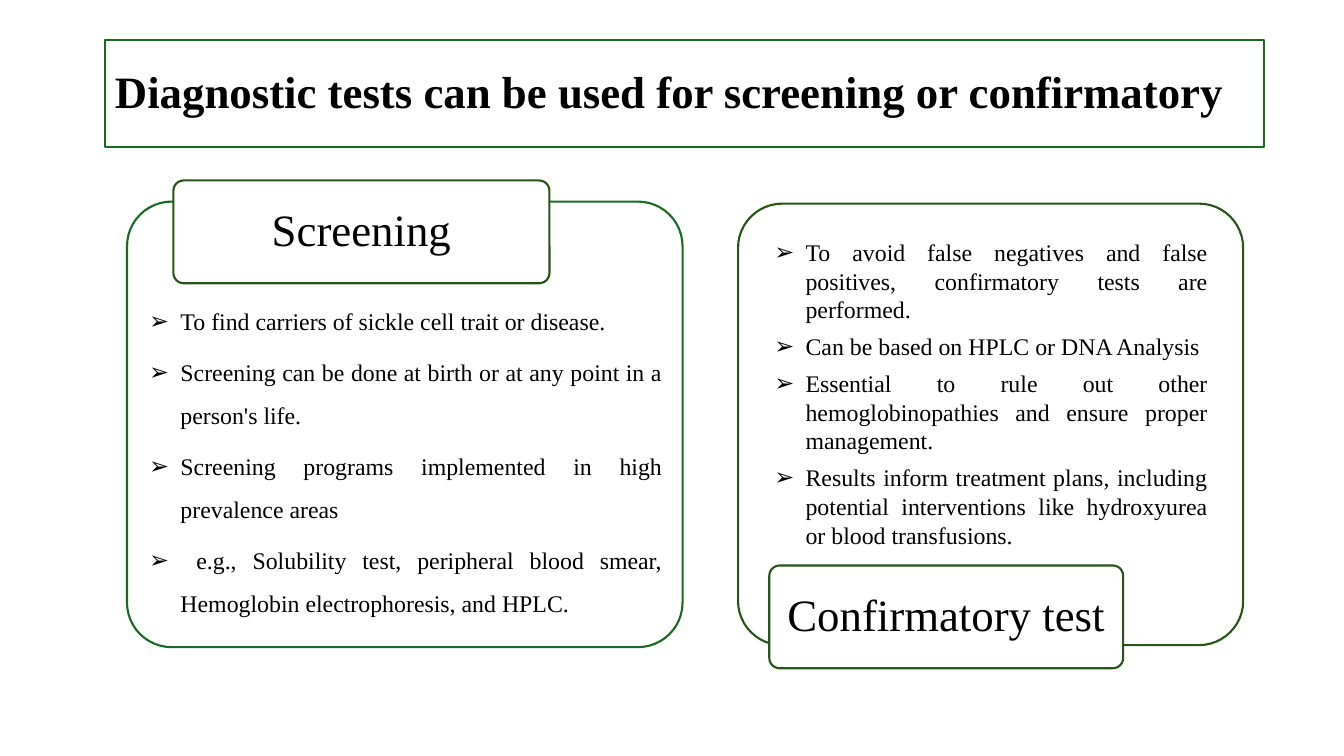
from lxml import etree
from pptx import Presentation
from pptx.dml.color import RGBColor
from pptx.enum.shapes import MSO_SHAPE
from pptx.enum.text import MSO_ANCHOR, MSO_AUTO_SIZE, PP_ALIGN
from pptx.oxml.ns import qn
from pptx.util import Inches, Pt

ROUND = MSO_SHAPE.ROUNDED_RECTANGLE
TOP, MIDDLE = MSO_ANCHOR.TOP, MSO_ANCHOR.MIDDLE
FIXED, GROW = MSO_AUTO_SIZE.NONE, MSO_AUTO_SIZE.SHAPE_TO_FIT_TEXT
LEFT, CENTER, JUSTIFY = PP_ALIGN.LEFT, PP_ALIGN.CENTER, PP_ALIGN.JUSTIFY
COLORS = {"ink": "000000", "paper": "FFFFFF", "green": "196B24", "olive": "275417"}
FONT = "Times New Roman"
INDENT = 0.31

SCREEN = [
    "To find carriers of sickle cell trait or disease.",
    "Screening can be done at birth or at any point in a person's life.",
    "Screening programs implemented in high prevalence areas",
    " e.g., Solubility test, peripheral blood smear, Hemoglobin electrophoresis, and HPLC.",
]
CONFIRM = [
    "To avoid false negatives and false positives, confirmatory tests are performed.",
    "Can be based on HPLC or DNA Analysis",
    "Essential to rule out other hemoglobinopathies and ensure proper management.",
    "Results inform treatment plans, including potential interventions like "
    "hydroxyurea or blood transfusions.",
]


def color(name):
    return RGBColor.from_string(COLORS[name])


def write(shape, lines, size=32, bold=False, align=LEFT, space=0.9, after=0,
          bullet=None, anchor=MIDDLE, fit=FIXED, inset=(0.1, 0.05)):
    frame = shape.text_frame
    frame.word_wrap = True
    frame.auto_size = fit
    frame.vertical_anchor = anchor
    frame.margin_left = frame.margin_right = Inches(inset[0])
    frame.margin_top = frame.margin_bottom = Inches(inset[1])
    for i, line in enumerate(lines):
        para = frame.add_paragraph() if i else frame.paragraphs[0]
        if bullet:
            props = para._p.get_or_add_pPr()
            props.set("marL", str(Inches(INDENT)))
            props.set("indent", str(-Inches(INDENT)))
            etree.SubElement(props, qn("a:buChar")).set("char", bullet)
        para.alignment = align
        para.line_spacing = space
        para.space_before = Pt(0)
        para.space_after = Pt(after)
        run = para.add_run()
        run.text = line
        run.font.name = FONT
        run.font.size = Pt(size)
        run.font.bold = bold
        run.font.color.rgb = color("ink")


class Deck:
    """Builds one slide in a fixed style."""

    def __init__(self):
        self.file = Presentation()
        self.file.slide_width = Inches(13.33)
        self.file.slide_height = Inches(7.5)
        self.slide = self.file.slides.add_slide(self.file.slide_layouts[3])

    def paint(self, shape, line, fill="paper", alpha=None):
        if fill:
            shape.fill.solid()
            shape.fill.fore_color.rgb = color(fill)
        else:
            shape.fill.background()
        if alpha:
            tone = shape.fill._xPr.find(".//" + qn("a:srgbClr"))
            etree.SubElement(tone, qn("a:alpha")).set("val", str(alpha * 1000))
        shape.line.color.rgb = color(line)
        shape.line.width = Pt(1.5)

    def card(self, box, line, **paint):
        shape = self.slide.shapes.add_shape(ROUND, *map(Inches, box))
        shape.adjustments[0] = 0.1
        shape.shadow.inherit = False
        self.paint(shape, line, **paint)
        return shape

    def label(self, text, box):
        write(self.card(box, "olive"), [text], align=CENTER, inset=(0.07, 0.04))

    def place(self, index, box):
        shape = self.slide.placeholders[index]
        shape.left, shape.top, shape.width, shape.height = map(Inches, box)
        self.slide.shapes._spTree.append(shape._element)
        return shape

    def title(self, text, box):
        shape = self.place(0, box)
        self.paint(shape, "green")
        write(shape, [text], bold=True)

    def points(self, index, lines, box, space):
        write(self.place(index, box), lines, size=17, align=JUSTIFY, space=space,
              after=6, bullet="➢", anchor=TOP, fit=GROW)


def main():
    deck = Deck()
    deck.card((7.32, 2.02, 5.01, 4.38), "olive", alpha=90)
    deck.label("Confirmatory test", (7.63, 5.61, 3.51, 1.02))
    deck.card((1.26, 2, 5.51, 4.42), "green", fill=None)
    deck.label("Screening", (1.72, 1.79, 3.73, 1.02))
    deck.points(2, CONFIRM, (7.58, 2.31, 4.5, 3.21), 1.0)
    deck.points(1, SCREEN, (1.38, 2.85, 5.29, 3.82), 1.5)
    deck.title("Diagnostic tests can be used for screening or confirmatory",
               (1.04, 0.4, 11.5, 1.06))
    deck.file.save("out.pptx")


if __name__ == "__main__":
    main()
